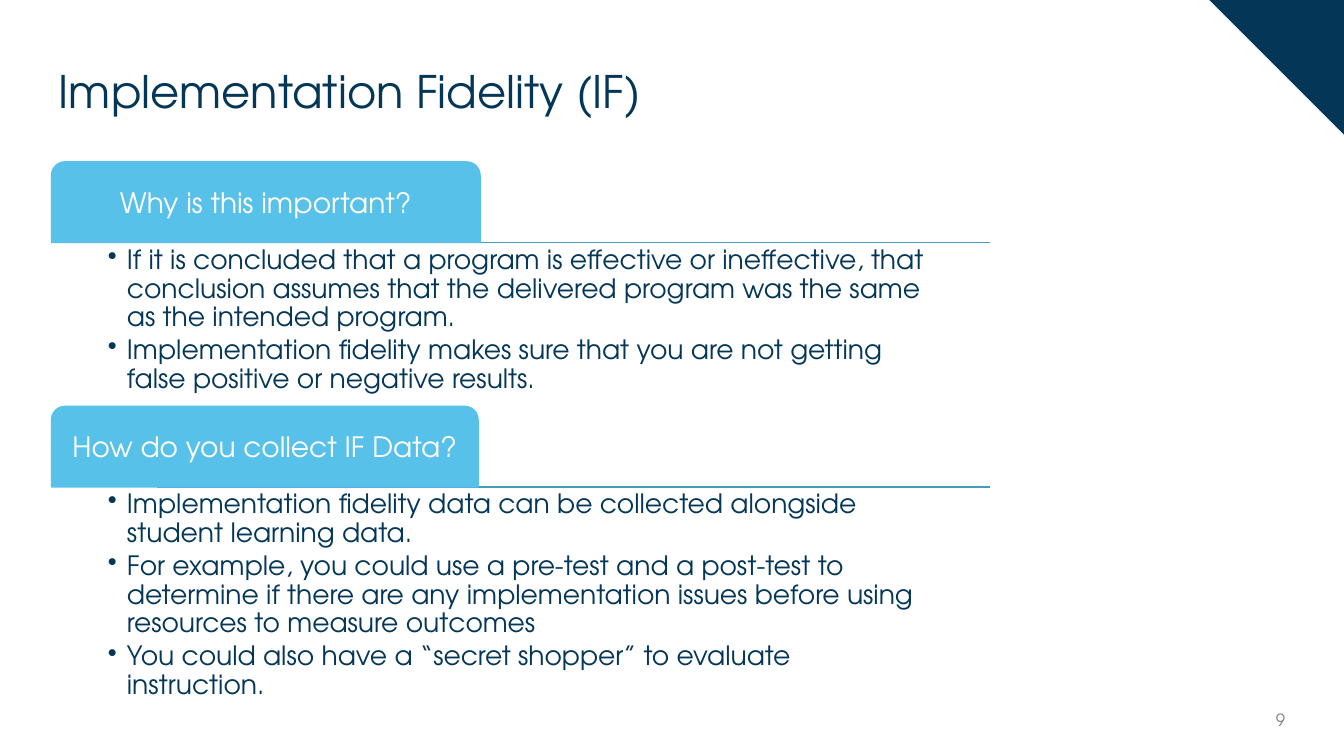
from dataclasses import dataclass

from lxml.etree import SubElement
from pptx import Presentation
from pptx.dml.color import RGBColor
from pptx.enum.shapes import MSO_CONNECTOR, MSO_SHAPE
from pptx.enum.text import MSO_ANCHOR, PP_ALIGN
from pptx.oxml.ns import qn
from pptx.util import Cm, Pt


@dataclass(frozen=True)
class Theme:
    font: str = "TeX Gyre Adventor"
    navy: str = "043657"
    sky: str = "57C1EA"
    rule: str = "469BBB"
    white: str = "FFFFFF"
    gray: str = "808080"
    title_size: float = 32
    label_size: float = 20
    body_size: float = 19
    number_size: float = 12


class SlideBuilder:
    def __init__(self, slide, theme):
        self.slide = slide
        self.theme = theme

    def add_text_run(self, paragraph, text, size, color):
        run = paragraph.add_run()
        run.text = text
        run.font.name = self.theme.font
        run.font.size = Pt(size)
        run.font.color.rgb = RGBColor.from_string(color)

    def frame(self, shape, anchor, inset=None):
        """Set wrapping, anchor and, if given, equal insets in cm."""
        frame = shape.text_frame
        frame.word_wrap = True
        frame.vertical_anchor = anchor
        if inset is not None:
            frame.margin_left = frame.margin_right = Cm(inset)
            frame.margin_top = frame.margin_bottom = Cm(inset)
        return frame

    def text(self, box, text, size, color, align=PP_ALIGN.LEFT):
        shape = self.slide.shapes.add_textbox(*map(Cm, box))
        paragraph = self.frame(shape, MSO_ANCHOR.MIDDLE).paragraphs[0]
        paragraph.alignment = align
        paragraph.line_spacing = 0.9
        self.add_text_run(paragraph, text, size, color)

    def shape(self, kind, box, color):
        shape = self.slide.shapes.add_shape(kind, *map(Cm, box))
        shape.shadow.inherit = False
        shape.fill.solid()
        shape.fill.fore_color.rgb = RGBColor.from_string(color)
        shape.line.fill.background()
        return shape

    def corner(self, box):
        self.shape(MSO_SHAPE.RIGHT_TRIANGLE, box, self.theme.navy).rotation = 180

    def rule(self, left, right, y):
        line = self.slide.shapes.add_connector(
            MSO_CONNECTOR.STRAIGHT, Cm(left), Cm(y), Cm(right), Cm(y))
        line.line.color.rgb = RGBColor.from_string(self.theme.rule)
        line.line.width = Pt(1)
        SubElement(line._element.spPr, qn("a:effectLst"))

    def label(self, box, text):
        tab = self.shape(MSO_SHAPE.ROUND_2_SAME_RECTANGLE, box, self.theme.sky)
        tab.line.color.rgb = RGBColor.from_string(self.theme.sky)
        tab.line.width = Pt(1)
        paragraph = self.frame(tab, MSO_ANCHOR.MIDDLE, 0.1).paragraphs[0]
        paragraph.alignment = PP_ALIGN.CENTER
        paragraph.line_spacing = 0.9
        self.add_text_run(paragraph, text, self.theme.label_size, self.theme.white)

    def bullets(self, box, points):
        shape = self.slide.shapes.add_textbox(*map(Cm, box))
        frame = self.frame(shape, MSO_ANCHOR.TOP, 0.1)
        for index, point in enumerate(points):
            paragraph = frame.add_paragraph() if index else frame.paragraphs[0]
            properties = paragraph._p.get_or_add_pPr()
            properties.set("marL", str(Cm(0.48)))
            properties.set("indent", str(-Cm(0.48)))
            SubElement(properties, qn("a:buChar"), char="•")
            paragraph.line_spacing = 0.9
            paragraph.space_after = Pt(3)
            self.add_text_run(paragraph, point, self.theme.body_size, self.theme.navy)

    def section(self, top, label_width, body_height, heading, points):
        """Place a tab label, the rule at its foot and the bullets below."""
        label_height = 2.03
        foot = top + label_height
        self.rule(3.95, 24.94, foot)
        self.label((1.3, top, label_width, label_height), heading)
        self.bullets((2.62, foot, 20.98, body_height), points)


SECTIONS = [
    (4.08, 10.8, 4.04, "Why is this important?", [
        "If it is concluded that a program is effective or ineffective, that "
        "conclusion assumes that the delivered program was the same as the "
        "intended program.",
        "Implementation fidelity makes sure that you are not getting false "
        "positive or negative results.",
    ]),
    (10.24, 10.75, 5.38, "How do you collect IF Data?", [
        "Implementation fidelity data can be collected alongside student "
        "learning data.",
        "For example, you could use a pre-test and a post-test to determine if "
        "there are any implementation issues before using resources to measure "
        "outcomes",
        "You could also have a “secret shopper” to evaluate instruction.",
    ]),
]


def main():
    deck = Presentation()
    deck.slide_width, deck.slide_height = Cm(33.87), Cm(19.05)
    theme = Theme()
    builder = SlideBuilder(deck.slides.add_slide(deck.slide_layouts[6]), theme)
    builder.corner((30.48, 0, 3.39, 3.39))
    builder.text((1.22, 1.02, 31.42, 2.69), "Implementation Fidelity (IF)",
                 theme.title_size, theme.navy)
    builder.text((25.02, 17.65, 7.62, 1.02), "9",
                 theme.number_size, theme.gray, PP_ALIGN.RIGHT)
    for section in SECTIONS:
        builder.section(*section)
    deck.save("out.pptx")


if __name__ == "__main__":
    main()
